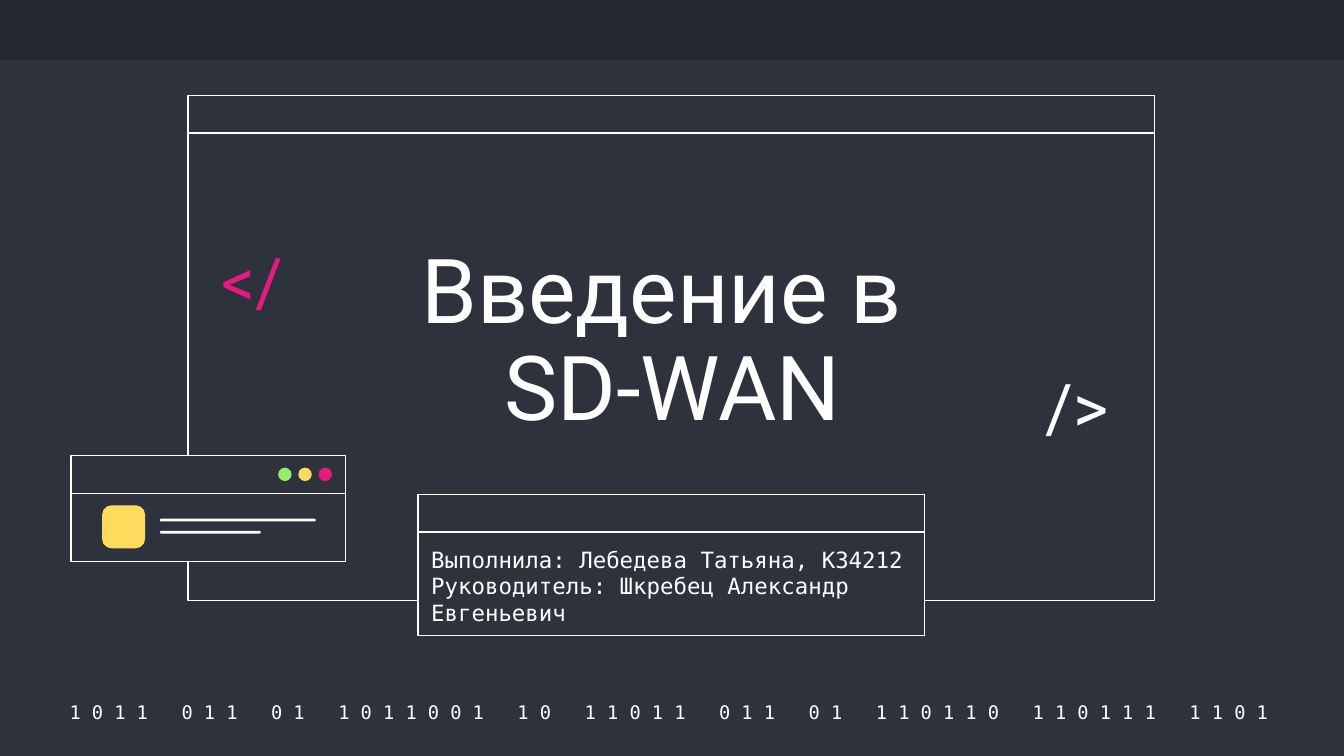
from pptx import Presentation, util as u
from pptx.dml.color import RGBColor
from pptx.enum import shapes, text

DARK, WHITE, PINK, GOLD, GREEN = "2D323C", "FFFFFF", "E81981", "FFDB5D", "94EE6B"
MONO, SANS = "DejaVu Sans Mono", "Roboto"
KIND, ALIGN, ANCHOR = shapes.MSO_SHAPE, text.PP_ALIGN, text.MSO_ANCHOR

deck = Presentation()
deck.slide_width, deck.slide_height = u.Inches(10), u.Inches(10 * 9 / 16)
slide = deck.slides.add_slide(deck.slide_layouts[6])
back = slide.background.fill
back.solid()
back.fore_color.rgb = RGBColor.from_string(DARK)


def draw(kind, box, fill, line=None):
    shape = slide.shapes.add_shape(kind, *map(u.Inches, box))
    shape.shadow.inherit = False
    shape.fill.solid()
    shape.fill.fore_color.rgb = RGBColor.from_string(fill)
    if line:
        shape.line.color.rgb = RGBColor.from_string(line)
        shape.line.width = u.Pt(0.75)
    else:
        shape.line.fill.background()
    return shape


def write(box, lines, size, font, color=WHITE, align=ALIGN.LEFT,
          anchor=ANCHOR.MIDDLE, space=1.0):
    frame = slide.shapes.add_textbox(*map(u.Inches, box)).text_frame
    frame.word_wrap = True
    frame.vertical_anchor = anchor
    frame.margin_left = frame.margin_right = u.Inches(0.1)
    frame.margin_top = frame.margin_bottom = u.Inches(0.1)
    frame.text = lines
    for para in frame.paragraphs:
        para.alignment = align
        para.line_spacing = space
        for run in para.runs:
            run.font.size = u.Pt(size)
            run.font.name = font
            run.font.color.rgb = RGBColor.from_string(color)


# Top band and the row of spaced digits
draw(KIND.RECTANGLE, (0, 0, 10, 0.45), "242830")
bits = "1011 011 01 1011001 10 11011 011 01 110110 110111 1101"
write((0.38, 5.2, 9.27, 0.2), " ".join(bits) + " ", 10, MONO, align=ALIGN.CENTER)

# Windows, each with a title bar
for x, y, w, h in [(1.4, 0.71, 7.19, 3.76), (3.11, 3.68, 3.77, 1.05),
                   (0.53, 3.39, 2.04, 0.79)]:
    draw(KIND.RECTANGLE, (x, y, w, h), DARK, WHITE)
    draw(KIND.RECTANGLE, (x, y, w, 0.28), DARK, WHITE)

# Small window content
icon = draw(KIND.ROUNDED_RECTANGLE, (0.76, 3.76, 0.32, 0.32), GOLD)
icon.adjustments[0] = 0.22
for y, w in [(3.86, 1.16), (3.95, 0.75)]:
    bar = draw(KIND.ROUNDED_RECTANGLE, (1.19, y, w, 0.02), WHITE)
    bar.adjustments[0] = 0.5
for i, color in enumerate([GREEN, GOLD, PINK]):
    draw(KIND.OVAL, (2.07 + 0.15 * i, 3.48, 0.1, 0.1), color)

# Title, code marks and authors
write((1.55, 1.79, 0.77, 0.66), "</", 36, SANS, PINK, space=0.9)
write((7.68, 2.73, 0.77, 0.66), "/>", 36, SANS, space=0.9)
write((2.26, 1.39, 5.49, 1.98), "Введение в \vSD-WAN", 48, SANS,
      align=ALIGN.CENTER, anchor=ANCHOR.BOTTOM, space=0.9)
write((3.11, 3.96, 4.01, 0.78),
      "Выполнила: Лебедева Татьяна, К34212\n"
      "Руководитель: Шкребец Александр Евгеньевич",
      12, MONO, anchor=ANCHOR.TOP)

deck.save("out.pptx")
